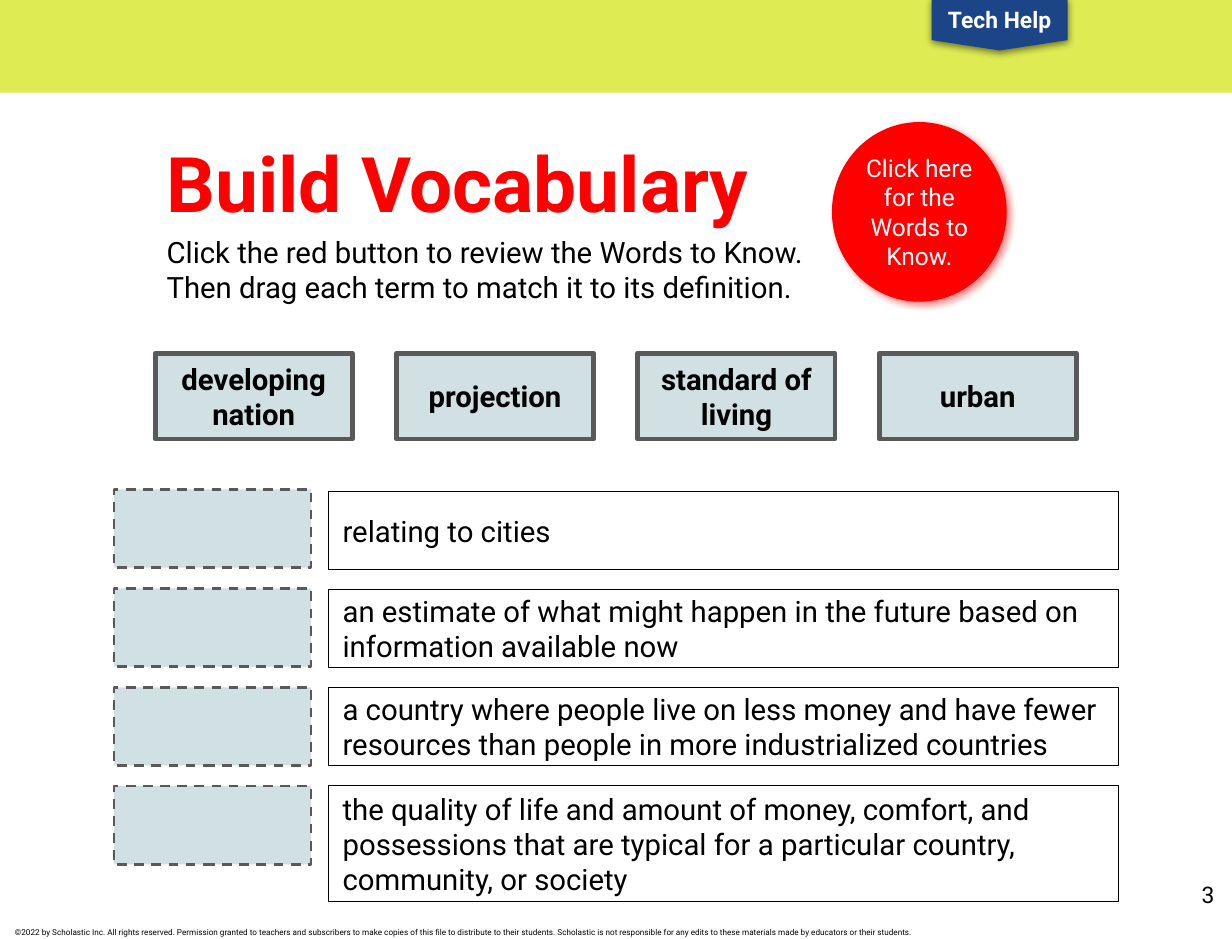
from dataclasses import dataclass
from typing import Optional

import lxml.etree
import pptx
import pptx.dml.color
import pptx.enum.dml
import pptx.enum.shapes
import pptx.enum.text
import pptx.oxml.ns
import pptx.util

Pt = pptx.util.Pt
Kind = pptx.enum.shapes.MSO_SHAPE
Align = pptx.enum.text.PP_ALIGN
Anchor = pptx.enum.text.MSO_ANCHOR

COLORS = {
    "lime": "DEEB52",
    "navy": "1C4587",
    "red": "FF0000",
    "pale": "D0E0E3",
    "gray": "595959",
    "black": "000000",
    "white": "FFFFFF",
}
FONT = "Roboto"
TERMS = ["developing nation", "projection", "standard of living", "urban"]


@dataclass
class Box:
    left: float
    top: float
    width: float
    height: float


@dataclass
class Shadow:
    color: str
    distance: float
    angle: int
    blur: float = 4.5
    opacity: int = 50


@dataclass
class Definition:
    text: str
    height: float = 48


DEFINITIONS = [
    Definition("relating to cities"),
    Definition("an estimate of what might happen in the future based on information available now"),
    Definition("a country where people live on less money and have fewer resources than people in more industrialized countries"),
    Definition("the quality of life and amount of money, comfort, and possessions that are typical for a particular country, community, or society", 71.3),
]


def rgb(name: str) -> pptx.dml.color.RGBColor:
    return pptx.dml.color.RGBColor.from_string(COLORS[name])


def write_text(shape, text: str, *, size: float = 18, color: str = "black", bold: bool = False,
               align=Align.LEFT, anchor=Anchor.MIDDLE, inset: float = 8.64) -> None:
    frame = shape.text_frame
    frame.word_wrap = True
    frame.vertical_anchor = anchor
    frame.margin_left = frame.margin_right = Pt(inset)
    frame.margin_top = frame.margin_bottom = Pt(inset)
    paragraph = frame.paragraphs[0]
    paragraph.text = text
    paragraph.alignment = align
    for run in paragraph.runs:
        run.font.name = FONT
        run.font.size = Pt(size)
        run.font.bold = bold
        run.font.color.rgb = rgb(color)


def add_shadow(shape, shadow: Shadow) -> None:
    qn = pptx.oxml.ns.qn
    effects = shape.element.spPr.find(qn("a:effectLst"))
    outer = lxml.etree.SubElement(
        effects, qn("a:outerShdw"), blurRad=str(Pt(shadow.blur)), dist=str(Pt(shadow.distance)),
        dir=str(shadow.angle * 60000), algn="bl", rotWithShape="0")
    color = lxml.etree.SubElement(outer, qn("a:srgbClr"), val=COLORS[shadow.color])
    lxml.etree.SubElement(color, qn("a:alpha"), val=str(shadow.opacity * 1000))


def add_shape(slide, box: Box, *, kind=Kind.RECTANGLE, fill: Optional[str] = None,
              line: Optional[str] = None, line_width: float = 0.75, dashed: bool = False,
              shadow: Optional[Shadow] = None):
    shape = slide.shapes.add_shape(kind, Pt(box.left), Pt(box.top), Pt(box.width), Pt(box.height))
    shape.shadow.inherit = False
    if fill:
        shape.fill.solid()
        shape.fill.fore_color.rgb = rgb(fill)
    else:
        shape.fill.background()
    if line:
        shape.line.color.rgb = rgb(line)
        shape.line.width = Pt(line_width)
    else:
        shape.line.fill.background()
    if dashed:
        shape.line.dash_style = pptx.enum.dml.MSO_LINE.DASH
    if shadow:
        add_shadow(shape, shadow)
    return shape


def add_text(slide, box: Box, text: str, **text_format) -> None:
    shape = slide.shapes.add_textbox(Pt(box.left), Pt(box.top), Pt(box.width), Pt(box.height))
    write_text(shape, text, **text_format)


def add_header(slide) -> None:
    add_shape(slide, Box(0, -0.7, 756, 57.6), fill="lime")
    tab = add_shape(slide, Box(571.7, -0.7, 83.5, 31.7), kind=Kind.FLOWCHART_OFFPAGE_CONNECTOR,
                    fill="navy", shadow=Shadow("black", 1.5, 90))
    write_text(tab, "Tech Help", size=14, color="white", bold=True, align=Align.CENTER, inset=7.2)
    add_text(slide, Box(93.6, 74.9, 394.6, 64.1), "Build Vocabulary",
             size=47, color="red", bold=True, anchor=Anchor.TOP)
    add_text(slide, Box(93.6, 133.2, 449.3, 64.1),
             "Click the red button to review the Words to Know.\n"
             "Then drag each term to match it to its definition.")
    button = add_shape(slide, Box(510.5, 74.9, 107.3, 110.2), kind=Kind.OVAL,
                       fill="red", shadow=Shadow("red", 3, 43))
    write_text(button, "Click here for the Words to Know.",
               size=15, color="white", align=Align.CENTER, inset=0)


def add_matching_rows(slide) -> None:
    for row, definition in enumerate(DEFINITIONS):
        answer = add_shape(slide, Box(201.6, 301.5 + 60.1 * row, 484.6, definition.height), line="black")
        write_text(answer, definition.text)
        add_shape(slide, Box(70, 300.2 + 60.7 * row, 121, 48), fill="pale",
                  line="gray", line_width=1.5, dashed=True)


def add_terms(slide) -> None:
    for column, term in enumerate(TERMS):
        card = add_shape(slide, Box(95.2 + 148.1 * column, 216.7, 121, 52.6),
                         fill="pale", line="gray", line_width=3)
        write_text(card, term, bold=True, align=Align.CENTER, inset=7.2)


def add_footer(slide) -> None:
    add_text(slide, Box(9.2, 568.8, 631.4, 7.2),
             "©2022 by Scholastic Inc. All rights reserved. Permission granted to teachers and subscribers "
             "to make copies of this file to distribute to their students. Scholastic is not responsible "
             "for any edits to these materials made by educators or their students.",
             size=5, anchor=Anchor.TOP, inset=0)
    add_text(slide, Box(707.8, 532.1, 45.4, 43.9), "3",
             size=14, align=Align.RIGHT, anchor=Anchor.TOP, inset=7.92)


def main() -> None:
    """Build the vocabulary matching slide."""
    presentation = pptx.Presentation()
    presentation.slide_width = Pt(756)
    presentation.slide_height = Pt(576)
    slide = presentation.slides.add_slide(presentation.slide_layouts[6])
    add_header(slide)
    add_matching_rows(slide)
    add_terms(slide)
    add_footer(slide)
    presentation.save("out.pptx")


if __name__ == "__main__":
    main()
